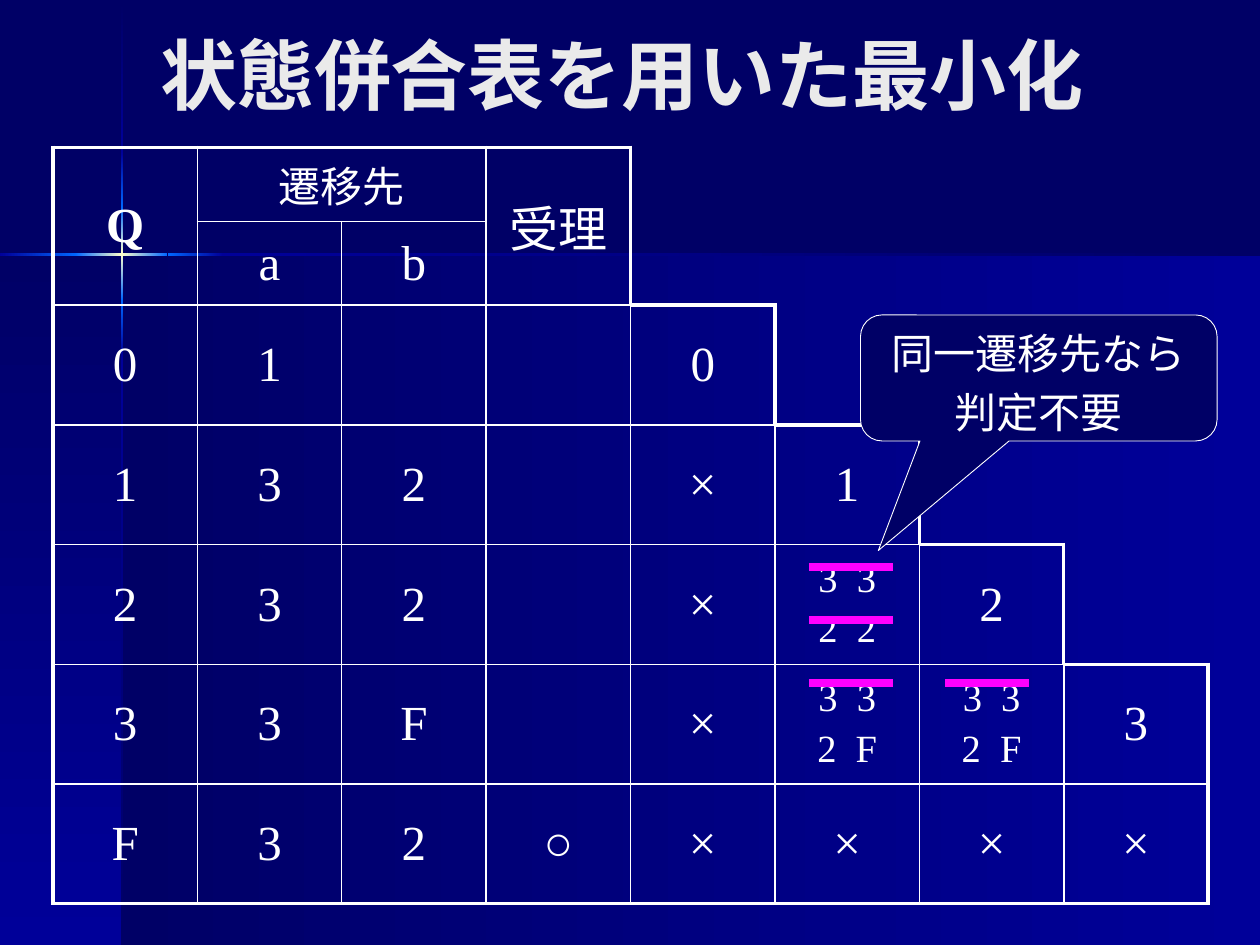
"""Build a slide showing automaton minimisation with a state merging table."""
import pptx
import pptx.dml.color
import pptx.enum.shapes
import pptx.enum.text
import pptx.oxml
import pptx.oxml.ns
import pptx.util
from lxml import etree

Inches = pptx.util.Inches
Pt = pptx.util.Pt
RGBColor = pptx.dml.color.RGBColor
qn = pptx.oxml.ns.qn
SHAPES = pptx.enum.shapes.MSO_SHAPE
ANCHOR = pptx.enum.text.MSO_ANCHOR
ALIGN = pptx.enum.text.PP_ALIGN

NAVY = RGBColor(0x00, 0x00, 0x66)
BLUE = RGBColor(0x00, 0x00, 0x99)
BRIGHT = RGBColor(0x00, 0x66, 0xFF)
CREAM = RGBColor(0xFF, 0xFF, 0xCC)
WHITE = RGBColor(0xFF, 0xFF, 0xFF)
PALE = RGBColor(0xEA, 0xEA, 0xEA)
MAGENTA = RGBColor(0xFF, 0x00, 0xFF)
FONT = "Times New Roman"


def style_text(frame, size, color, bold=False, align=ALIGN.CENTER, spacing=0.2):
    for para in frame.paragraphs:
        para.alignment = align
        para.space_before = Pt(round(size * spacing, 1))
        for span in para.runs:
            span.font.name = FONT
            span.font.size = Pt(size)
            span.font.bold = bold
            span.font.color.rgb = color


def set_border(cell, side, width):
    edge = etree.SubElement(cell._tc.get_or_add_tcPr(), qn(f"a:ln{side}"))
    if width:
        edge.set("w", str(Pt(width)))
        fill = etree.SubElement(edge, qn("a:solidFill"))
        etree.SubElement(fill, qn("a:srgbClr"), val=str(WHITE))
    else:
        etree.SubElement(edge, qn("a:noFill"))


deck = pptx.Presentation()
deck.slide_width = Inches(10)
deck.slide_height = Inches(7.5)
page = deck.slides.add_slide(deck.slide_layouts[5])
page.background.fill.solid()
page.background.fill.fore_color.rgb = NAVY

ACROSS, DOWN = 0, 90
GLOW = (BRIGHT, CREAM, BRIGHT)
backdrop = [
    (0.97, 2.02, 9.03, 5.48, ACROSS, (NAVY, BLUE)),
    (0, 2.02, 0.97, 5.48, DOWN, (NAVY, BLUE)),
    (0.96, 0.01, 0.02, 1.2, DOWN, (NAVY, BLUE)),
    (0.96, 2.82, 0.02, 4.68, DOWN, (BLUE, NAVY)),
    (1.77, 2.01, 8.23, 0.02, ACROSS, (BLUE, NAVY)),
    (0.96, 2.38, 0.02, 0.44, DOWN, (BRIGHT, BLUE)),
    (0.96, 1.21, 0.02, 0.44, DOWN, (BLUE, BRIGHT)),
    (0.96, 1.65, 0.02, 0.73, DOWN, GLOW),
    (0, 2.01, 0.61, 0.02, ACROSS, (BLUE, BRIGHT)),
    (1.33, 2.01, 0.44, 0.02, ACROSS, (BRIGHT, BLUE)),
    (0.6, 2.01, 0.73, 0.02, ACROSS, GLOW),
]
for left, top, width, height, angle, colors in backdrop:
    panel = page.shapes.add_shape(
        SHAPES.RECTANGLE, Inches(left), Inches(top), Inches(width), Inches(height))
    panel.shadow.inherit = False
    panel.line.fill.background()
    panel.fill.gradient()
    gradient = panel._element.spPr.find(qn("a:gradFill"))
    gradient.find(qn("a:lin")).set("ang", str(angle * 60000))
    stops = gradient.find(qn("a:gsLst"))
    for stop in list(stops):
        stops.remove(stop)
    for index, color in enumerate(colors):
        position = index * 100000 // (len(colors) - 1)
        stop = etree.SubElement(stops, qn("a:gs"), pos=str(position))
        etree.SubElement(stop, qn("a:srgbClr"), val=str(color))

title = page.shapes.title
title.left, title.top = Inches(1.17), Inches(0.25)
title.width, title.height = Inches(8.33), Inches(0.67)
title.text_frame.text = "状態併合表を用いた最小化"
title.text_frame.vertical_anchor = ANCHOR.MIDDLE
style_text(title.text_frame, 44, PALE, True, ALIGN.LEFT, 0)

rows = [
    ["Q", "遷移先", "", "受理"],
    ["", "a", "b", ""],
    ["0", "1", "", "", "0"],
    ["1", "3", "2", "", "×", "1"],
    ["2", "3", "2", "", "×", "3  3\n2  2", "2"],
    ["3", "3", "F", "", "×", "3  3\n2  F", "3  3\n2  F", "3"],
    ["F", "3", "2", "○", "×", "×", "×", "×"],
]
column_count = 8
frame = page.shapes.add_table(
    len(rows), column_count, Inches(0.42), Inches(1.17), Inches(9.17), Inches(5.92))
table = frame.table
table.first_row = False
table.horz_banding = False
for column in table.columns:
    column.width = Inches(9.17 / column_count)
for index, row in enumerate(table.rows):
    row.height = Inches(0.59 if index < 2 else 0.95)
table.cell(0, 0).merge(table.cell(1, 0))
table.cell(0, 1).merge(table.cell(0, 2))
table.cell(0, 3).merge(table.cell(1, 3))

filled = {(r, c) for r, texts in enumerate(rows) for c in range(len(texts))}
sides = {"L": (0, -1), "R": (0, 1), "T": (-1, 0), "B": (1, 0)}
for r in range(len(rows)):
    for c in range(column_count):
        cell = table.cell(r, c)
        if cell.is_spanned:
            continue
        for side, (down, across) in sides.items():
            count = ((r, c) in filled) + ((r + down, c + across) in filled)
            set_border(cell, side, (0, 2.25, 1)[count])
        cell.fill.background()
        cell.vertical_anchor = ANCHOR.MIDDLE
        if (r, c) in filled and rows[r][c]:
            text = rows[r][c]
            cell.text_frame.text = text
            size = 22 if "\n" in text else 24 if text == "遷移先" else 28
            style_text(cell.text_frame, size, WHITE, text == "Q")

callout = page.shapes.add_shape(
    SHAPES.ROUNDED_RECTANGULAR_CALLOUT, Inches(6.83), Inches(2.5), Inches(2.83), Inches(1))
for index, value in enumerate((-0.45, 1.37, 0.17)):
    callout.adjustments[index] = value
callout.shadow.inherit = False
callout.fill.solid()
callout.fill.fore_color.rgb = NAVY
callout.line.color.rgb = WHITE
callout.line.width = Pt(0.5)
callout.text_frame.word_wrap = True
callout.text_frame.vertical_anchor = ANCHOR.TOP
callout.text_frame.text = "同一遷移先なら\n判定不要"
style_text(callout.text_frame, 24, WHITE)

for left, top in [(6.42, 4.5), (6.42, 4.92), (6.42, 5.42), (7.5, 5.42)]:
    strike = page.shapes.add_connector(
        pptx.enum.shapes.MSO_CONNECTOR.STRAIGHT,
        Inches(left), Inches(top), Inches(left + 0.67), Inches(top))
    strike.line.color.rgb = MAGENTA
    strike.line.width = Pt(4.5)
    etree.SubElement(strike._element.spPr, qn("a:effectLst"))

deck.save("out.pptx")
